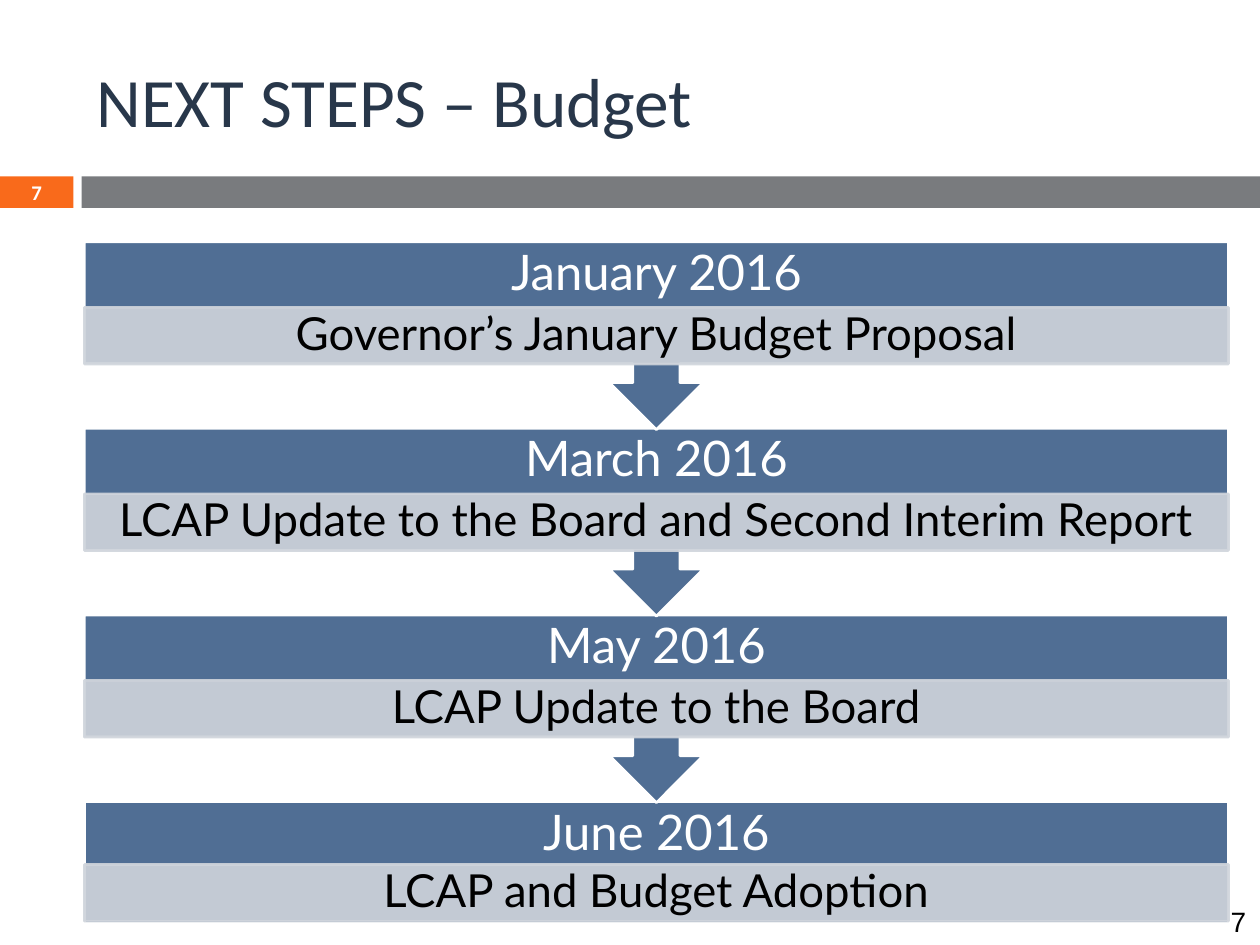
from pptx import Presentation
from pptx.dml.color import RGBColor
from pptx.enum.shapes import MSO_SHAPE
from pptx.enum.text import MSO_ANCHOR, PP_ALIGN
from pptx.util import Pt
from lxml import etree

NS = "http://schemas.openxmlformats.org/drawingml/2006/main"


def add_block(kind, box, fill, line=None, opacity=100):
    block = slide.shapes.add_shape(kind, *[Pt(v) for v in box])
    block.shadow.inherit = False
    block.fill.solid()
    block.fill.fore_color.rgb = RGBColor.from_string(fill)
    if line:
        block.line.color.rgb = RGBColor.from_string(line)
        block.line.width = Pt(1.5)
    else:
        block.line.fill.background()
    if opacity < 100:
        for color in block._element.spPr.iter(f"{{{NS}}}srgbClr"):
            etree.SubElement(color, f"{{{NS}}}alpha", val=str(opacity * 1000))
    return block


def write(shape, text, size, font, color, align=PP_ALIGN.CENTER,
          insets=(0, 0, 0, 0), wrap=True, anchor=MSO_ANCHOR.MIDDLE):
    frame = shape.text_frame
    frame.word_wrap = wrap
    frame.vertical_anchor = anchor
    (frame.margin_left, frame.margin_top,
     frame.margin_right, frame.margin_bottom) = [Pt(v) for v in insets]
    paragraph = frame.paragraphs[0]
    paragraph.text = text
    paragraph.alignment = align
    paragraph.font.size = Pt(size)
    paragraph.font.name = font
    paragraph.font.color.rgb = RGBColor.from_string(color)
    return paragraph


prs = Presentation()
prs.slide_width, prs.slide_height = Pt(720), Pt(540)
slide = prs.slides.add_slide(prs.slide_layouts[6])

# Band under the title, with the slide number
number_tab = add_block(MSO_SHAPE.RECTANGLE, (0, 100.8, 42, 18), "F96A1B")
write(number_tab, "7", 11.9, "Calibri", "FFFFFF").font.bold = True
add_block(MSO_SHAPE.RECTANGLE, (46.6, 100.8, 673.4, 18), "797B7E")

# Title
title = slide.shapes.add_textbox(Pt(48), Pt(18), Pt(642), Pt(78))
write(title, "NEXT STEPS – Budget", 39.6, "Calibri", "28374A",
      PP_ALIGN.LEFT, (7.2, 3.6, 7.2, 3.6))

# Timeline, drawn from the last step up so each arrow tip lies on the next step
steps = [
    ("January 2016", "Governor’s January Budget Proposal"),
    ("March 2016", "LCAP Update to the Board and Second Interim Report"),
    ("May 2016", "LCAP Update to the Board"),
    ("June 2016", "LCAP and Budget Adoption"),
]
LEFT, TOP, WIDTH, PITCH = 48.2, 138.2, 653.8, 106.6
DETAIL_HEIGHT = 32.4

for index, (month, event) in reversed(list(enumerate(steps))):
    top = TOP + index * PITCH
    is_last = index == len(steps) - 1
    kind = MSO_SHAPE.RECTANGLE if is_last else MSO_SHAPE.DOWN_ARROW_CALLOUT
    height = 69.8 if is_last else 107.3
    detail_offset = 36 if is_last else 37.4

    step = add_block(kind, (LEFT, top, WIDTH, height), "506E94", "FFFFFF")
    heading = write(step, month, 28, "Lato", "FFFFFF",
                    insets=(15.8, 0, 15.8, DETAIL_HEIGHT))
    detail = add_block(MSO_SHAPE.RECTANGLE,
                       (LEFT, top + detail_offset, WIDTH, DETAIL_HEIGHT),
                       "D0D5DC", "D0D5DC", opacity=90)
    caption = write(detail, event, 26, "Lato", "000000",
                    insets=(14.4, 2.9, 14.4, 2.9))
    heading.line_spacing = caption.line_spacing = 0.9

# Page number in the corner
page_number = slide.shapes.add_textbox(Pt(696.2), Pt(513.4), Pt(30), Pt(26.6))
write(page_number, "7", 16, "Arial", "000000", PP_ALIGN.LEFT,
      (7.2, 3.6, 7.2, 3.6), anchor=MSO_ANCHOR.TOP)

prs.save("out.pptx")
